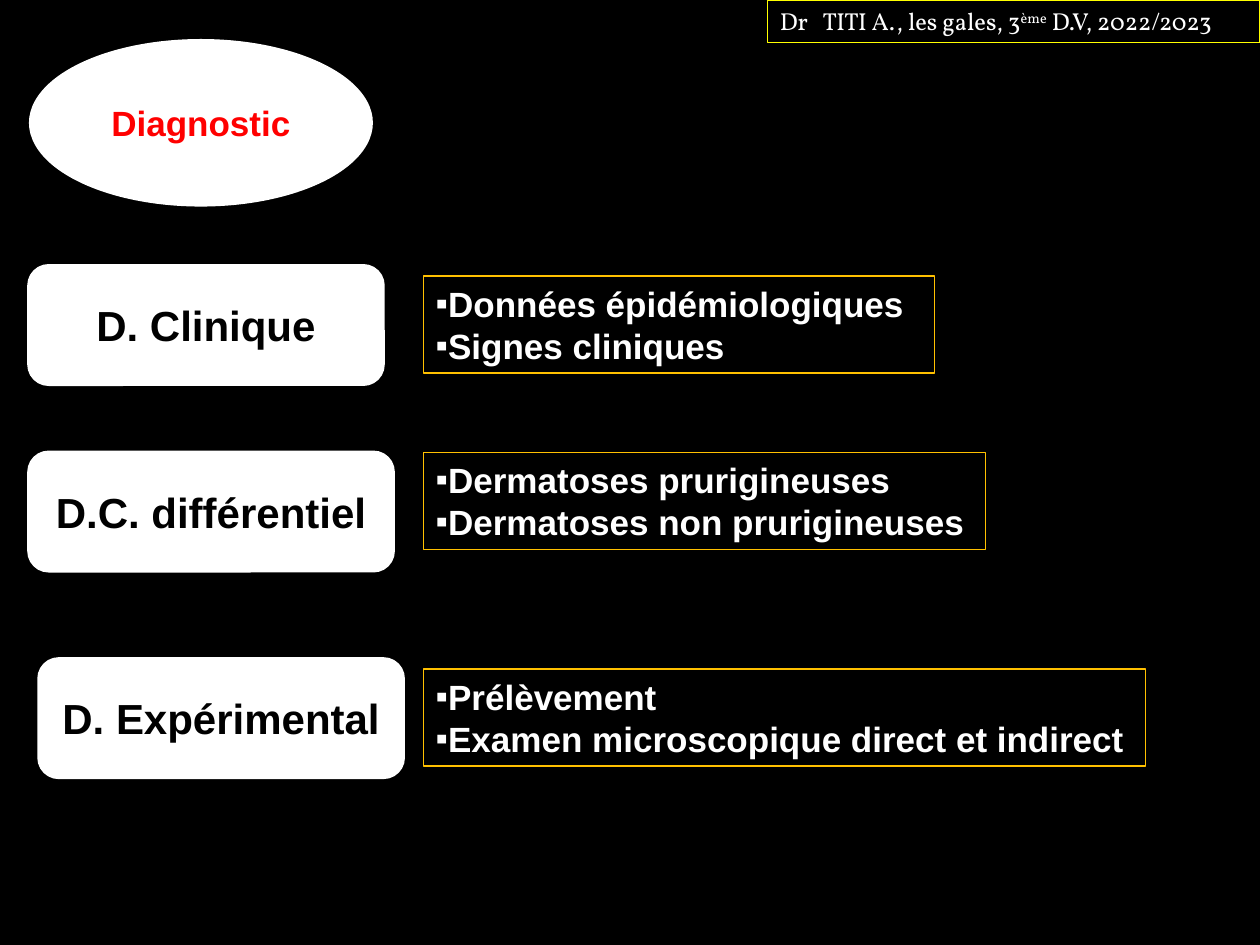
"""Build the slide listing the three diagnostic approaches to mange."""
from dataclasses import dataclass

from lxml import etree
from pptx import Presentation
from pptx.dml.color import RGBColor
from pptx.enum import shapes, text
from pptx.oxml.ns import qn
from pptx.util import Inches, Pt


@dataclass(frozen=True)
class Theme:
    black: RGBColor = RGBColor(0, 0, 0)
    white: RGBColor = RGBColor(255, 255, 255)
    red: RGBColor = RGBColor(255, 0, 0)
    amber: RGBColor = RGBColor(255, 192, 0)
    yellow: RGBColor = RGBColor(255, 255, 0)
    body_font: str = "Arial"
    header_font: str = "Vollkorn"
    label_size: float = 24
    body_size: float = 20
    header_size: float = 14
    label_line: float = 2
    box_line: float = 0.75


@dataclass(frozen=True)
class Box:
    left: float
    top: float
    width: float
    height: float

    def emu(self) -> tuple:
        return tuple(Inches(v) for v in (self.left, self.top, self.width, self.height))


@dataclass(frozen=True)
class Approach:
    label: str
    label_box: Box
    points: tuple[str, ...]
    points_box: Box


THEME = Theme()
LABEL_H, POINTS_LEFT, POINTS_H = 0.94, 3.36, 0.77
APPROACHES = (
    Approach("D. Clinique", Box(0.23, 2.11, 2.81, LABEL_H),
             ("Données épidémiologiques", "Signes cliniques"),
             Box(POINTS_LEFT, 2.19, 4.06, POINTS_H)),
    Approach("D.C. différentiel", Box(0.23, 3.59, 2.89, LABEL_H),
             ("Dermatoses prurigineuses", "Dermatoses non prurigineuses"),
             Box(POINTS_LEFT, 3.59, 4.46, POINTS_H)),
    Approach("D. Expérimental", Box(0.31, 5.23, 2.89, LABEL_H),
             ("Prélèvement", "Examen microscopique direct et indirect"),
             Box(POINTS_LEFT, 5.31, 5.73, POINTS_H)),
)
HEADER = (("Dr\tTITI A., les gales, 3", 0), ("ème", 30000), (" D.V, 2022/2023", 0))


def add_run(p, words: str, font: str, size: float, color: RGBColor, bold: bool = False):
    r = p.add_run()
    r.text = words
    r.font.name, r.font.size, r.font.bold = font, Pt(size), bold
    r.font.color.rgb = color
    return r


def add_label(s, kind, box: Box, words: str, size: float, color: RGBColor, line: float = 0) -> None:
    sp = s.shapes.add_shape(kind, *box.emu())
    sp.shadow.inherit = False
    sp.fill.solid()
    sp.fill.fore_color.rgb = THEME.white
    if line:
        sp.line.color.rgb = THEME.white
        sp.line.width = Pt(line)
    else:
        sp.line.fill.background()
    tf = sp.text_frame
    tf.word_wrap = True
    tf.vertical_anchor = text.MSO_ANCHOR.MIDDLE
    p = tf.paragraphs[0]
    p.alignment = text.PP_ALIGN.CENTER
    add_run(p, words, THEME.body_font, size, color, True)


def add_outlined_box(s, box: Box, color: RGBColor, wrap: bool):
    sp = s.shapes.add_textbox(*box.emu())
    sp.line.color.rgb = color
    sp.line.width = Pt(THEME.box_line)
    tf = sp.text_frame
    tf.word_wrap = wrap
    tf.auto_size = text.MSO_AUTO_SIZE.SHAPE_TO_FIT_TEXT
    return tf


def add_points(s, approach: Approach) -> None:
    tf = add_outlined_box(s, approach.points_box, THEME.amber, False)
    for i, point in enumerate(approach.points):
        p = tf.add_paragraph() if i else tf.paragraphs[0]
        props = p._p.get_or_add_pPr()
        etree.SubElement(props, qn("a:buFont"), typeface=THEME.body_font)
        etree.SubElement(props, qn("a:buChar"), char="▪")
        add_run(p, point, THEME.body_font, THEME.body_size, THEME.white, True)


def add_header(s) -> None:
    tf = add_outlined_box(s, Box(6.09, 0, 3.91, 0.34), THEME.yellow, True)
    p = tf.paragraphs[0]
    tabs = etree.SubElement(p._p.get_or_add_pPr(), qn("a:tabLst"))
    etree.SubElement(tabs, qn("a:tab"), pos=str(Inches(0.34)), algn="l")
    for words, baseline in HEADER:
        r = add_run(p, words, THEME.header_font, THEME.header_size, THEME.white)
        if baseline:
            r._r.get_or_add_rPr().set("baseline", str(baseline))


def main() -> None:
    prs = Presentation()
    prs.slide_width, prs.slide_height = Inches(10), Inches(7.5)
    s = prs.slides.add_slide(prs.slide_layouts[6])
    s.background.fill.solid()
    s.background.fill.fore_color.rgb = THEME.black
    add_label(s, shapes.MSO_SHAPE.OVAL, Box(0.23, 0.31, 2.73, 1.33),
              "Diagnostic", THEME.body_size, THEME.red)
    for approach in APPROACHES:
        add_label(s, shapes.MSO_SHAPE.ROUNDED_RECTANGLE, approach.label_box,
                  approach.label, THEME.label_size, THEME.black, THEME.label_line)
    for approach in APPROACHES:
        add_points(s, approach)
    add_header(s)
    prs.save("out.pptx")


if __name__ == "__main__":
    main()
